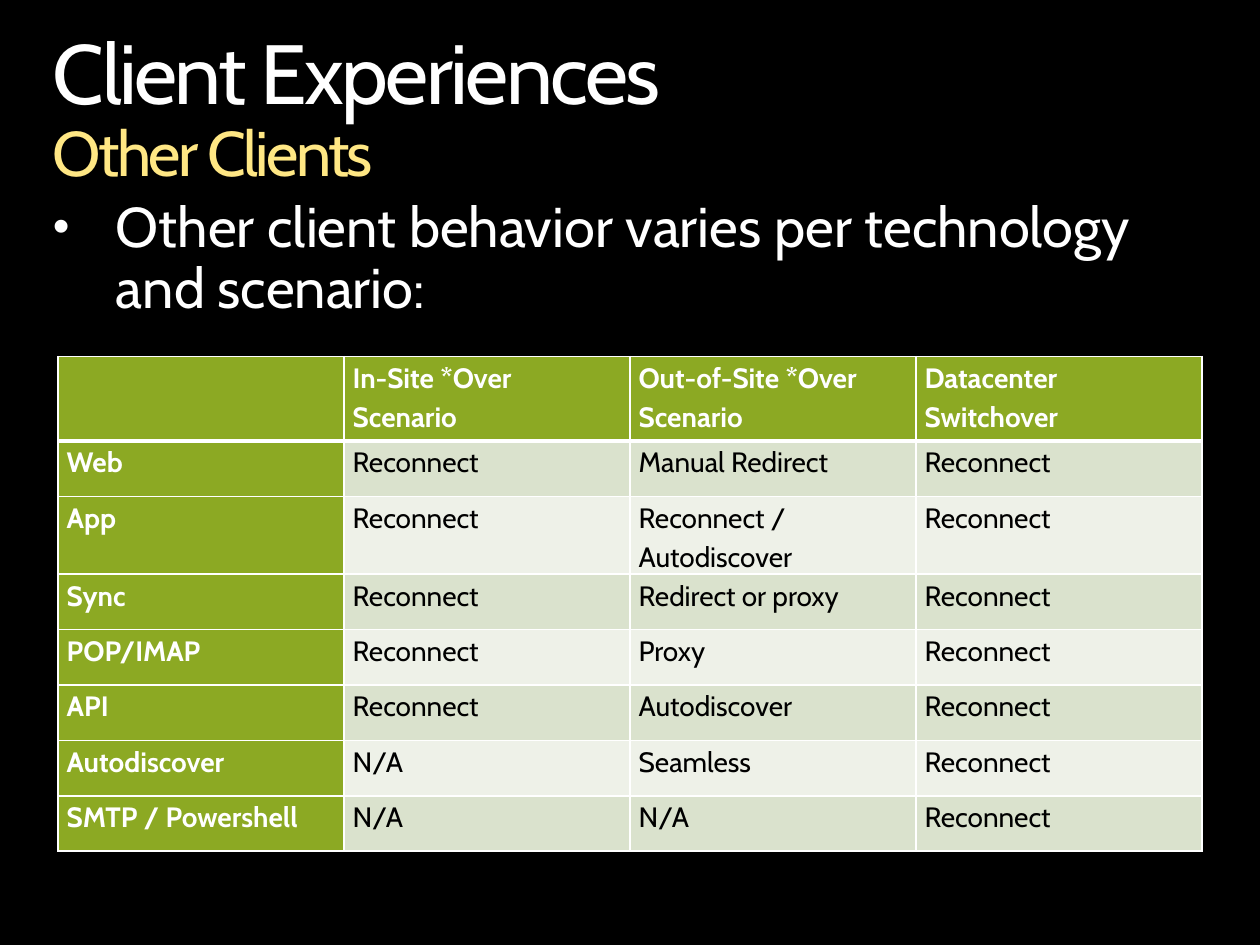
from typing import NamedTuple

from lxml import etree
from pptx import Presentation
from pptx.dml.color import RGBColor
from pptx.enum.text import MSO_ANCHOR, MSO_AUTO_SIZE, PP_ALIGN
from pptx.oxml.ns import qn
from pptx.util import Inches, Pt

TOP = MSO_ANCHOR.TOP
LEFT = PP_ALIGN.LEFT
NO_AUTOFIT = MSO_AUTO_SIZE.NONE

FONT = "Cabin"
BLACK, WHITE, YELLOW = "000000", "FFFFFF", "FFE784"
GREEN, BAND_DARK, BAND_LIGHT = "8CA923", "DAE2CD", "EEF1E8"

HEADERS = ("", "In-Site *Over Scenario", "Out-of-Site *Over Scenario", "Datacenter Switchover")
COLUMN_WIDTH, HEADER_HEIGHT, ROW_HEIGHT = 2.27, 0.67, 0.44


class ClientRow(NamedTuple):
    client: str
    in_site: str
    out_of_site: str
    datacenter: str = "Reconnect"


CLIENT_ROWS = (
    ClientRow("Web", "Reconnect", "Manual Redirect"),
    ClientRow("App", "Reconnect", "Reconnect / Autodiscover"),
    ClientRow("Sync", "Reconnect", "Redirect or proxy"),
    ClientRow("POP/IMAP", "Reconnect", "Proxy"),
    ClientRow("API", "Reconnect", "Autodiscover"),
    ClientRow("Autodiscover", "N/A", "Seamless"),
    ClientRow("SMTP / Powershell", "N/A", "N/A"),
)


def rgb(color: str) -> RGBColor:
    return RGBColor.from_string(color)


def format_run(run, size: float, color: str, bold: bool = False) -> None:
    run.font.name = FONT
    run.font.size = Pt(size)
    run.font.bold = bold
    run.font.color.rgb = rgb(color)


def place_placeholder(shape, top: float, height: float, text: str):
    """Position a placeholder, set its text and return its only paragraph."""
    shape.left, shape.top = Inches(0.42), Inches(top)
    shape.width, shape.height = Inches(9.17), Inches(height)
    frame = shape.text_frame
    frame.text = text
    frame.word_wrap = True
    frame.auto_size = NO_AUTOFIT
    frame.vertical_anchor = TOP
    frame.margin_left = frame.margin_right = frame.margin_top = frame.margin_bottom = 0
    paragraph = frame.paragraphs[0]
    paragraph.alignment = LEFT
    paragraph.line_spacing = 0.9
    paragraph.space_before = Pt(0)
    return paragraph


def add_title(slide) -> None:
    paragraph = place_placeholder(
        slide.shapes.title, 0.25, 1.27, "Client Experiences\vOther Clients")
    for run, size, color in zip(paragraph.runs, (48, 36), (WHITE, YELLOW)):
        format_run(run, size, color)
        run.font._element.set("spc", "-150")


def add_body(slide) -> None:
    paragraph = place_placeholder(
        slide.placeholders[1], 1.58, 2.16,
        "Other client behavior varies per technology and scenario:")
    properties = paragraph._p.get_or_add_pPr()
    properties.set("marL", str(Inches(0.5)))
    properties.set("indent", str(Inches(-0.5)))
    etree.SubElement(properties, qn("a:buSzPct")).set("val", "85000")
    etree.SubElement(properties, qn("a:buChar")).set("char", "•")
    format_run(paragraph.runs[0], 32, WHITE)


def set_borders(cell, top: float, bottom: float) -> None:
    properties = cell._tc.get_or_add_tcPr()
    for side, width in (("L", 1), ("R", 1), ("T", top), ("B", bottom)):
        line = etree.SubElement(properties, qn(f"a:ln{side}"), w=str(Pt(width)))
        fill = etree.SubElement(line, qn("a:solidFill"))
        etree.SubElement(fill, qn("a:srgbClr"), val=WHITE)


def fill_cell(cell, text: str, row: int, column: int) -> None:
    is_heading = row == 0 or column == 0
    set_borders(cell, top=3 if row == 1 else 1, bottom=3 if row == 0 else 1)
    cell.fill.solid()
    band = BAND_DARK if row % 2 else BAND_LIGHT
    cell.fill.fore_color.rgb = rgb(GREEN if is_heading else band)
    cell.margin_left = cell.margin_right = Inches(0.07)
    cell.margin_top = cell.margin_bottom = 0
    cell.text_frame.text = text
    paragraph = cell.text_frame.paragraphs[0]
    paragraph.line_spacing = 1.15
    for run in paragraph.runs:
        format_run(run, 16, WHITE if is_heading else BLACK, is_heading)


def add_client_table(slide) -> None:
    rows = (HEADERS, *CLIENT_ROWS)
    table = slide.shapes.add_table(
        len(rows), len(HEADERS), Inches(0.46), Inches(2.83),
        Inches(COLUMN_WIDTH * len(HEADERS)),
        Inches(HEADER_HEIGHT + ROW_HEIGHT * len(CLIENT_ROWS))).table
    table.first_col = True
    for column in table.columns:
        column.width = Inches(COLUMN_WIDTH)
    for row_index, texts in enumerate(rows):
        table.rows[row_index].height = Inches(ROW_HEIGHT if row_index else HEADER_HEIGHT)
        for column_index, text in enumerate(texts):
            fill_cell(table.cell(row_index, column_index), text, row_index, column_index)


def main() -> None:
    presentation = Presentation()
    presentation.slide_width, presentation.slide_height = Inches(10), Inches(7.5)
    slide = presentation.slides.add_slide(presentation.slide_layouts[1])
    slide.background.fill.solid()
    slide.background.fill.fore_color.rgb = rgb(BLACK)
    add_title(slide)
    add_body(slide)
    add_client_table(slide)
    presentation.save("out.pptx")


if __name__ == "__main__":
    main()
